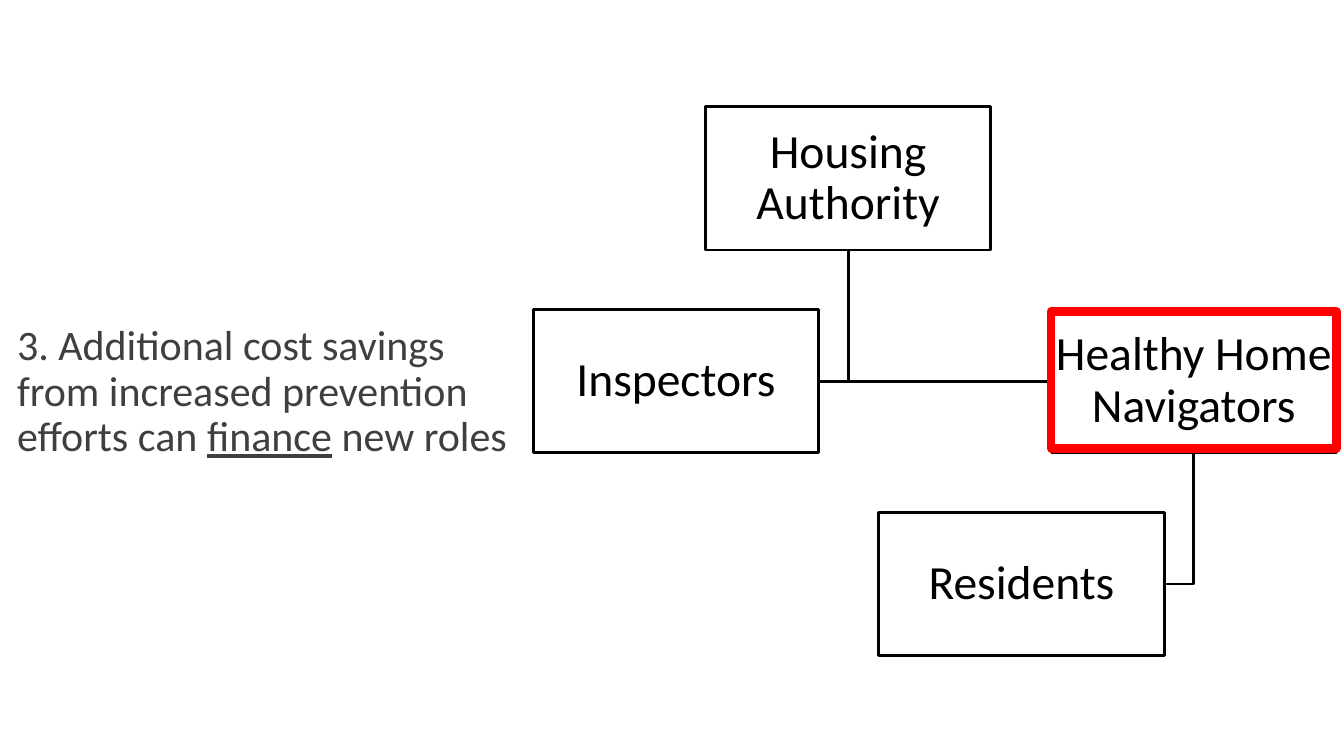
import pptx
import pptx.util
import pptx.dml.color
import pptx.enum.shapes
import pptx.enum.text

Cm = pptx.util.Cm
Pt = pptx.util.Pt

COLORS = {"title": "3F3F3F", "ink": "000000", "box": "FFFFFF", "highlight": "FE0000"}
FONT = "Calibri"
BOX_W, BOX_H = 7.19, 3.61
TOP, ROW_STEP = 2.69, 5.11
BOXES = {
    "Housing Authority": (17.78, 0),
    "Inspectors": (13.44, 1),
    "Healthy Home Navigators": (26.49, 1),
    "Residents": (22.15, 2),
}
LINKS = [
    ("Healthy Home Navigators", "Residents"),
    ("Housing Authority", "Healthy Home Navigators"),
    ("Housing Authority", "Inspectors"),
]


def rgb(name):
    """Return the named colour."""
    return pptx.dml.color.RGBColor.from_string(COLORS[name])


def set_frame(tf, anchor, side, top):
    """Set anchor, wrapping and margins of a text frame."""
    tf.word_wrap = True
    tf.auto_size = pptx.enum.text.MSO_AUTO_SIZE.NONE
    tf.vertical_anchor = anchor
    tf.margin_left = tf.margin_right = Cm(side)
    tf.margin_top = tf.margin_bottom = Cm(top)


def add_run(p, text, size, color, underline=None):
    """Append a formatted run to a paragraph."""
    r = p.add_run()
    r.text = text
    r.font.name = FONT
    r.font.size = Pt(size)
    r.font.color.rgb = rgb(color)
    r.font.underline = underline


def set_outline(sp, color, width):
    """Give a shape a plain line without shadow."""
    sp.shadow.inherit = False
    sp.line.color.rgb = rgb(color)
    sp.line.width = Pt(width)


def add_title(s):
    """Fill the title placeholder."""
    sp = s.shapes.title
    sp.left, sp.top, sp.width, sp.height = Cm(0.18), Cm(7.29), Cm(12.88), Cm(4.45)
    set_frame(sp.text_frame, pptx.enum.text.MSO_ANCHOR.BOTTOM, 0.25, 0.13)
    p = sp.text_frame.paragraphs[0]
    p.alignment = pptx.enum.text.PP_ALIGN.LEFT
    p.line_spacing = 0.9
    add_run(p, "3. Additional cost savings from increased prevention efforts can ", 30, "title")
    add_run(p, "finance", 30, "title", True)
    add_run(p, " new roles", 30, "title")


def add_rect(s, left, top, height, color, width):
    """Add an outlined rectangle of the chart's box width."""
    sp = s.shapes.add_shape(
        pptx.enum.shapes.MSO_SHAPE.RECTANGLE, Cm(left), Cm(top), Cm(BOX_W), Cm(height)
    )
    set_outline(sp, color, width)
    return sp


def add_box(s, text, left, row):
    """Add a labelled box of the organisation chart."""
    sp = add_rect(s, left, TOP + row * ROW_STEP, BOX_H, "ink", 2)
    sp.fill.solid()
    sp.fill.fore_color.rgb = rgb("box")
    set_frame(sp.text_frame, pptx.enum.text.MSO_ANCHOR.MIDDLE, 0.05, 0.05)
    p = sp.text_frame.paragraphs[0]
    p.alignment = pptx.enum.text.PP_ALIGN.CENTER
    p.line_spacing = 0.9
    add_run(p, text, 34, "ink")


def add_elbow(s, parent, child):
    """Draw an elbow from a parent's bottom to the near side of its child."""
    parent_left, parent_row = BOXES[parent]
    child_left, child_row = BOXES[child]
    x = parent_left + BOX_W / 2
    y = TOP + parent_row * ROW_STEP + BOX_H
    end_x = child_left if child_left > x else child_left + BOX_W
    end_y = TOP + child_row * ROW_STEP + BOX_H / 2
    builder = s.shapes.build_freeform(Cm(x), Cm(y))
    builder.add_line_segments([(Cm(x), Cm(end_y)), (Cm(end_x), Cm(end_y))], close=False)
    sp = builder.convert_to_shape()
    sp.fill.background()
    set_outline(sp, "ink", 2)


def add_highlight(s, name):
    """Frame the named box in the highlight colour."""
    left, row = BOXES[name]
    sp = add_rect(s, left, TOP + row * ROW_STEP + 0.05, 3.45, "highlight", 6)
    sp.fill.background()


def main():
    """Build and save the slide."""
    prs = pptx.Presentation()
    prs.slide_width, prs.slide_height = Cm(33.87), Cm(19.05)
    s = prs.slides.add_slide(prs.slide_layouts[5])
    add_title(s)
    for parent, child in LINKS:
        add_elbow(s, parent, child)
    for text, (left, row) in BOXES.items():
        add_box(s, text, left, row)
    add_highlight(s, "Healthy Home Navigators")
    prs.save("out.pptx")


if __name__ == "__main__":
    main()
